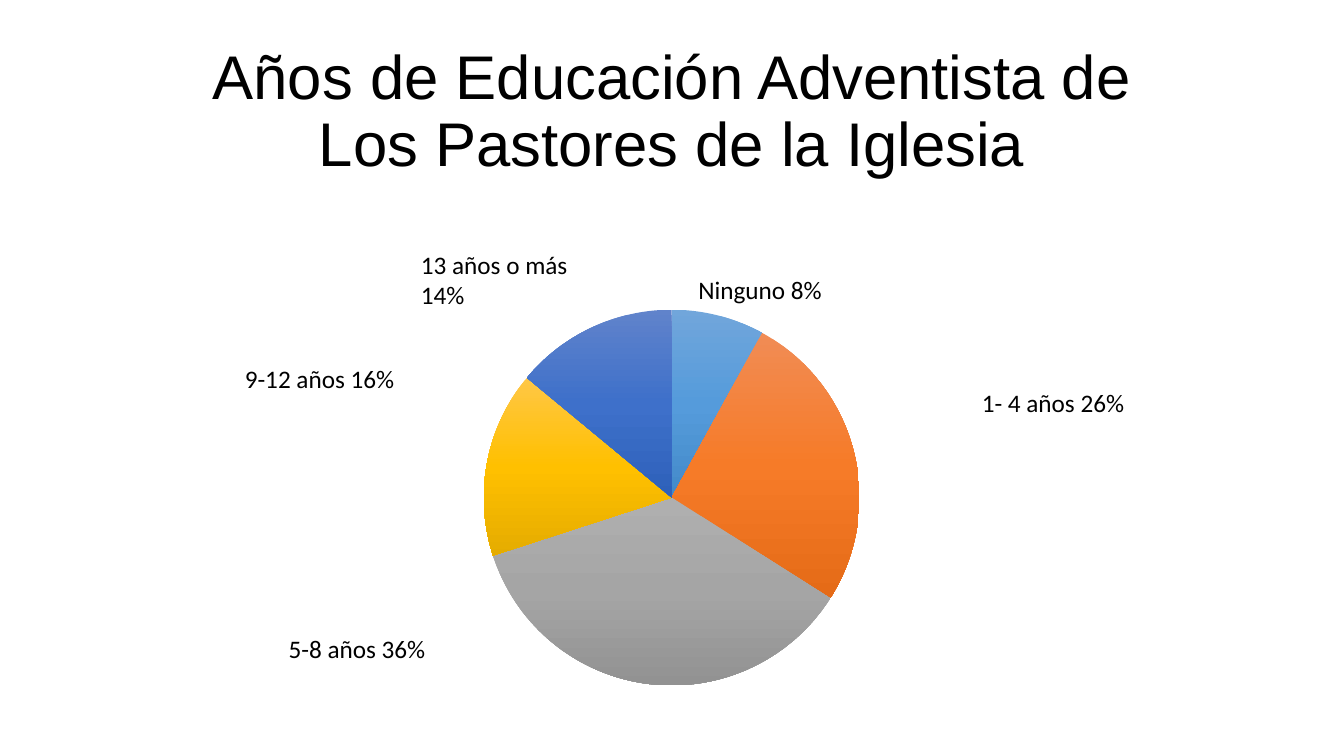
from copy import deepcopy
from dataclasses import dataclass

from pptx import Presentation
from pptx.chart.data import CategoryChartData as ChartData
from pptx.dml.color import RGBColor as Rgb
from pptx.enum.chart import XL_CHART_TYPE as Kind
from pptx.enum.text import MSO_ANCHOR as Anchor, MSO_AUTO_SIZE as Fit, PP_ALIGN as Align
from pptx.oxml import parse_xml
from pptx.oxml.ns import nsdecls, qn
from pptx.util import Inches, Pt


@dataclass(frozen=True)
class Theme:
    ink: str = "000000"
    head: str = "Arial"
    body: str = "Calibri"
    big: float = 58.7
    mid: float = 24
    small: float = 10
    # Top, middle and bottom shade of each slice
    shades: tuple = (
        ("71A6DB", "559BDB", "438AC9"),
        ("F18C55", "F67B28", "E56B17"),
        ("AFAFAF", "A5A5A5", "929292"),
        ("FFC746", "FFC000", "E5AC00"),
        ("6083CB", "3E70CA", "2E61BA"),
    )


THEME = Theme()
VALUES = (8, 26, 36, 16, 14)
PLOT = {"x": 0.099, "y": 0.441, "w": 0.803, "h": 0.535}
TITLE = ("Años de Educación Adventista de", "Los Pastores de la Iglesia")
# Label name, share and box
LABELS = (
    ("13 años o más", 14, (5.47, 3.25, 2.25, 0.91)),
    ("9-12 años", 16, (3.14, 4.75, 2.33, 0.91)),
    ("5-8 años", 36, (3.72, 8.33, 3.08, 0.5)),
    ("Ninguno", 8, (9.14, 3.58, 3.25, 0.5)),
    ("1- 4 años", 26, (12.89, 5.08, 2.92, 0.5)),
)


def style(font, name, size):
    font.name, font.size = name, Pt(size)
    font.color.rgb = Rgb.from_string(THEME.ink)


def add_text(slide, box, lines, name, size):
    frame = slide.shapes.add_textbox(*map(Inches, box)).text_frame
    frame.word_wrap = True
    for i, line in enumerate(lines):
        para = frame.add_paragraph() if i else frame.paragraphs[0]
        run = para.add_run()
        run.text = line
        style(run.font, name, size)
    return frame


def add_title(slide, box):
    frame = add_text(slide, box, TITLE, THEME.head, THEME.big)
    frame.vertical_anchor = Anchor.MIDDLE
    frame.margin_left = frame.margin_right = Inches(0.16)
    frame.margin_top = frame.margin_bottom = Inches(0.08)
    for para in frame.paragraphs:
        para.alignment = Align.CENTER
        para.line_spacing = 0.9


def set_plot(chart):
    area = chart._chartSpace.find(".//" + qn("c:plotArea"))
    for old in area.findall(qn("c:layout")):
        area.remove(old)
    sides = "".join(f'<c:{key} val="{val}"/>' for key, val in PLOT.items())
    area.insert(0, parse_xml(
        f'<c:layout {nsdecls("c")}><c:manualLayout><c:layoutTarget val="inner"/>'
        f'<c:xMode val="edge"/><c:yMode val="edge"/>{sides}'
        "</c:manualLayout></c:layout>"))


def shade(chart):
    points = chart.plots[0].series[0].points
    fills = [points[i].format.fill for i in range(len(VALUES))]
    for fill in fills:
        fill.gradient()
        fill.gradient_angle = 270
    # A third stop between the two default ones
    for stops in chart._chartSpace.iter(qn("a:gsLst")):
        stops.insert(1, deepcopy(stops[0]))
    for i, (fill, tones) in enumerate(zip(fills, THEME.shades)):
        for stop, tone, place in zip(fill.gradient_stops, tones, (0, 0.5, 1)):
            stop.color.rgb = Rgb.from_string(tone)
            stop.position = place
        points[i].format.line.fill.background()


def add_pie(slide, box):
    data = ChartData()
    data.categories = [str(i + 1) for i in range(len(VALUES))]
    data.add_series("Series 1", VALUES)
    chart = slide.shapes.add_chart(Kind.PIE, *map(Inches, box), data).chart
    chart.has_title = chart.has_legend = False
    style(chart.font, THEME.body, THEME.small)
    chart.plots[0].vary_by_categories = True
    set_plot(chart)
    shade(chart)


def add_labels(slide):
    for name, share, box in LABELS:
        frame = add_text(slide, box, [f"{name} {share}%"], THEME.body, THEME.mid)
        frame.auto_size = Fit.SHAPE_TO_FIT_TEXT


def main():
    deck = Presentation()
    deck.slide_width, deck.slide_height = Inches(17.78), Inches(10)
    slide = deck.slides.add_slide(deck.slide_layouts[6])
    add_pie(slide, (2.66, 0, 12.44, 9.29))
    add_title(slide, (1.22, 0.53, 15.33, 1.93))
    add_labels(slide)
    deck.save("out.pptx")


if __name__ == "__main__":
    main()
